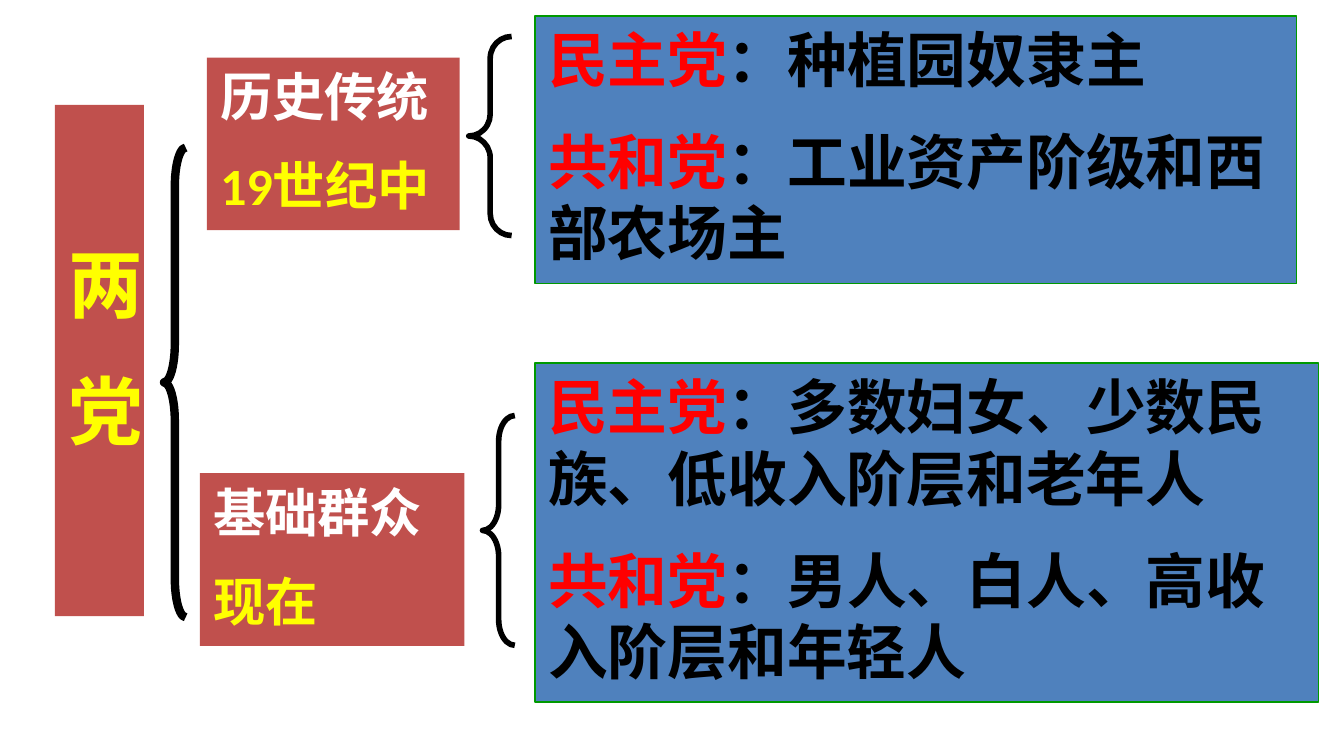
from dataclasses import dataclass

import pptx
import pptx.dml.color
import pptx.enum.shapes
import pptx.enum.text
import pptx.oxml.ns
import pptx.util
from lxml import etree

Cm = pptx.util.Cm
Pt = pptx.util.Pt
RGB = pptx.dml.color.RGBColor
Shape = pptx.enum.shapes.MSO_SHAPE
Align = pptx.enum.text.PP_ALIGN


@dataclass(frozen=True)
class Theme:
    """Colours, fonts and type sizes of the slide."""
    topic: RGB = RGB(0xC0, 0x50, 0x4D)
    detail: RGB = RGB(0x4F, 0x81, 0xBD)
    edge: RGB = RGB(0x00, 0x99, 0x00)
    black: RGB = RGB(0, 0, 0)
    white: RGB = RGB(255, 255, 255)
    yellow: RGB = RGB(255, 255, 0)
    red: RGB = RGB(255, 0, 0)
    latin: str = "Calibri"
    cjk: str = "Noto Sans CJK SC"
    root_size: int = 40
    topic_size: int = 28
    detail_size: int = 32


THEME = Theme()


def add_run(p, text, *, size, color, font=THEME.latin):
    """Append a bold run of text to a paragraph."""
    r = p.add_run()
    r.text = text
    r.font.size = Pt(size)
    r.font.bold = True
    r.font.color.rgb = color
    r.font.name = font
    ea = etree.SubElement(r.font._element, pptx.oxml.ns.qn("a:ea"))
    ea.set("typeface", THEME.cjk)


def add_panel(slide, box, paragraphs, *, fill, size, line=None,
              align=Align.LEFT, font=THEME.latin, top=0.13):
    """Draw a filled box whose paragraphs are lists of (text, colour)."""
    sp = slide.shapes.add_shape(Shape.RECTANGLE, *map(Cm, box))
    sp.shadow.inherit = False
    sp.fill.solid()
    sp.fill.fore_color.rgb = fill
    if line is None:
        sp.line.fill.background()
    else:
        sp.line.color.rgb = line
        sp.line.width = Pt(0.75)
    tf = sp.text_frame
    tf.word_wrap = True
    tf.vertical_anchor = pptx.enum.text.MSO_ANCHOR.TOP
    tf.margin_top = Cm(top)
    for i, runs in enumerate(paragraphs):
        p = tf.add_paragraph() if i else tf.paragraphs[0]
        p.alignment = align
        if i:
            p.space_before = Pt(size / 2)
        for text, color in runs:
            add_run(p, text, size=size, color=color, font=font)


def add_brace(slide, box, *, curve, width):
    """Draw a left brace in the given box."""
    sp = slide.shapes.add_shape(Shape.LEFT_BRACE, *map(Cm, box))
    sp.shadow.inherit = False
    sp.fill.background()
    sp.line.color.rgb = THEME.black
    sp.line.width = Pt(width)
    sp.adjustments[0] = curve
    sp.adjustments[1] = 0.5


def add_root(slide, box, text):
    """Draw the tall box with one character per paragraph."""
    add_panel(slide, box, [[(c, THEME.yellow)] for c in text],
              fill=THEME.topic, size=THEME.root_size,
              align=Align.CENTER, top=2.51)


def add_topic(slide, box, title, period):
    """Draw a branch box with its title and period."""
    add_panel(slide, box, [[(title, THEME.white)], [(period, THEME.yellow)]],
              fill=THEME.topic, size=THEME.topic_size)


def add_parties(slide, box, parties):
    """Draw a detail box with one paragraph for each party."""
    add_panel(slide, box,
              [[(name, THEME.red), ("：" + text, THEME.black)]
               for name, text in parties],
              fill=THEME.detail, size=THEME.detail_size,
              line=THEME.edge, font=THEME.cjk)


def main():
    """Build and save the slide."""
    prs = pptx.Presentation()
    prs.slide_width, prs.slide_height = Cm(25.4), Cm(14.28)
    slide = prs.slides.add_slide(prs.slide_layouts[6])
    add_root(slide, (1.04, 1.98, 1.68, 9.66), "两党")
    add_topic(slide, (3.91, 1.09, 4.78, 3.26), "历史传统", "19世纪中")
    add_topic(slide, (3.78, 8.94, 5, 3.26), "基础群众", "现在")
    add_parties(slide, (10.11, 0.3, 14.4, 5.06), [
        ("民主党", "种植园奴隶主"),
        ("共和党", "工业资产阶级和西部农场主"),
    ])
    add_brace(slide, (3.1, 2.79, 0.41, 8.87), curve=1.79, width=4.5)
    add_brace(slide, (8.86, 0.69, 0.81, 3.76), curve=0.51, width=3)
    add_brace(slide, (9.12, 7.85, 0.61, 4.34), curve=0.8, width=3)
    add_parties(slide, (10.11, 6.86, 14.81, 6.4), [
        ("民主党", "多数妇女、少数民族、低收入阶层和老年人"),
        ("共和党", "男人、白人、高收入阶层和年轻人"),
    ])
    prs.save("out.pptx")


if __name__ == "__main__":
    main()
